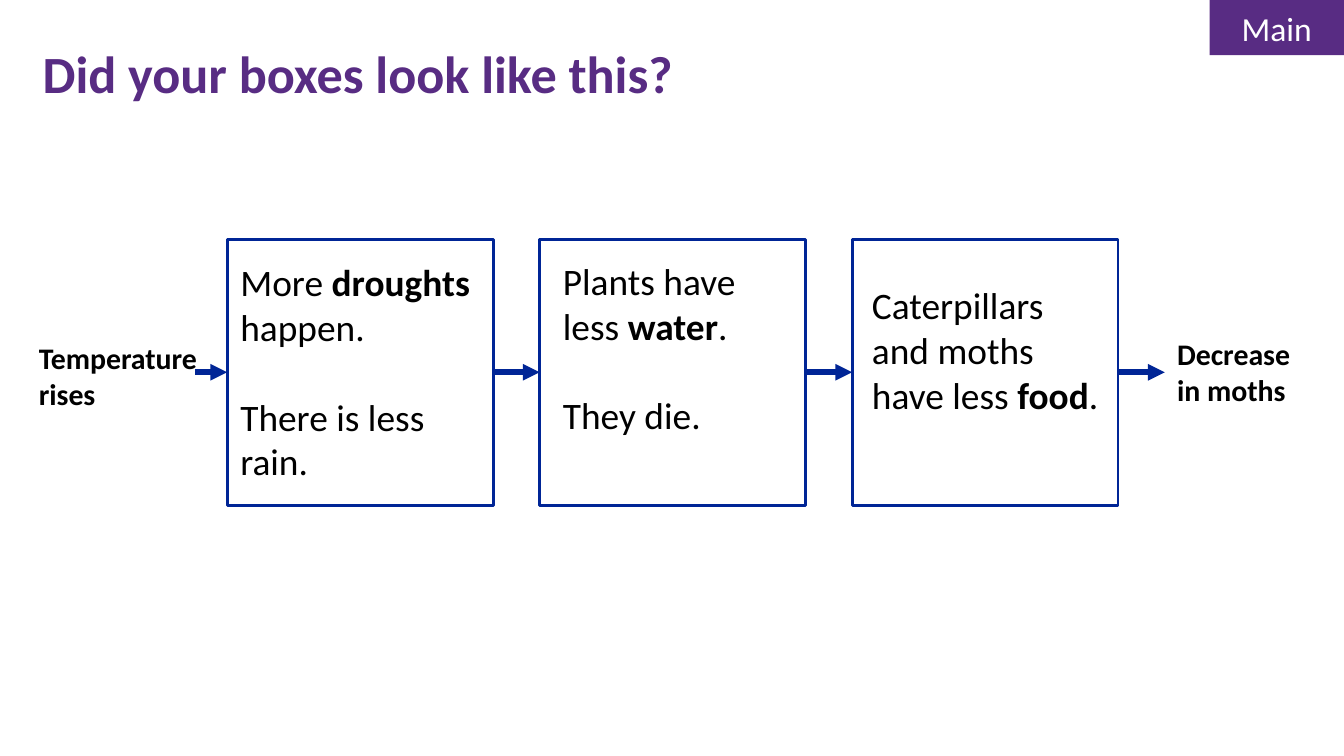
"""Build a slide with a cause-and-effect chain from rising temperature to fewer moths."""
from lxml import etree
from pptx import Presentation
from pptx.dml.color import RGBColor
from pptx.enum.shapes import MSO_CONNECTOR, MSO_SHAPE
from pptx.enum.text import MSO_ANCHOR, PP_ALIGN
from pptx.oxml.ns import qn
from pptx.util import Pt

RECTANGLE = MSO_SHAPE.RECTANGLE
STRAIGHT = MSO_CONNECTOR.STRAIGHT
TOP, MIDDLE = MSO_ANCHOR.TOP, MSO_ANCHOR.MIDDLE
LEFT, CENTER = PP_ALIGN.LEFT, PP_ALIGN.CENTER
LEFT_SIDE, RIGHT_SIDE = 1, 3
COLORS = {"purple": "582C83", "blue": "002596", "black": "000000", "white": "FFFFFF"}


def color(name):
    return RGBColor.from_string(COLORS[name])


def write(shape, text, size=20, fill="black", bold=False, align=LEFT, anchor=TOP, gap=24):
    """Write text, one paragraph a line, with *starred* words in bold."""
    frame = shape.text_frame
    frame.word_wrap = True
    frame.vertical_anchor = anchor
    for number, line in enumerate(text.split("\n")):
        paragraph = frame.add_paragraph() if number else frame.paragraphs[0]
        paragraph.alignment = align
        if number:
            paragraph.space_before = Pt(gap)
        for part, words in enumerate(line.split("*")):
            run = paragraph.add_run()
            run.text = words
            run.font.name = "Calibri"
            run.font.size = Pt(size)
            run.font.bold = bold or part % 2 == 1
            run.font.color.rgb = color(fill)


prs = Presentation()
prs.slide_width, prs.slide_height = Pt(720), Pt(405)
slide = prs.slides.add_slide(prs.slide_layouts[6])
shapes = slide.shapes

box_left, box_top, box_size, box_pitch = 121.7, 128.2, 142.5, 167.4
arrow_y = box_top + box_size / 2
boxes = []
for step in range(3):
    box = shapes.add_shape(RECTANGLE, Pt(box_left + step * box_pitch), Pt(box_top),
                           Pt(box_size), Pt(box_size))
    box.shadow.inherit = False
    box.fill.background()
    box.line.color.rgb = color("blue")
    box.line.width = Pt(1.5)
    boxes.append(box)

for source, target in zip([None] + boxes, boxes + [None]):
    arrow = shapes.add_connector(STRAIGHT, Pt(104.4), Pt(arrow_y), Pt(624), Pt(arrow_y))
    if source:
        arrow.begin_connect(source, RIGHT_SIDE)
    if target:
        arrow.end_connect(target, LEFT_SIDE)
    arrow.line.color.rgb = color("blue")
    arrow.line.width = Pt(3)
    etree.SubElement(arrow.line._get_or_add_ln(), qn("a:tailEnd"), type="triangle")
    etree.SubElement(arrow._element.spPr, qn("a:effectLst"))

heading = {"size": 28, "fill": "purple", "bold": True}
outcome = {"size": 16, "bold": True}
texts = [
    (15.8, 18.7, 651, 41, "Did your boxes look like this?", heading),
    (13.7, 178.6, 101, 46, "Temperature rises", outcome),
    (623.5, 176.4, 76, 46, "Decrease in moths", outcome),
    (121.7, 135.4, 144, 128, "More *droughts* happen.\nThere is less rain.", {}),
    (294.5, 134.6, 124, 104, "Plants have less *water*.\nThey die.", {}),
    (460, 147.6, 137, 104, "Caterpillars and moths have less *food*.", {}),
]
for left, top, width, height, text, style in texts:
    write(shapes.add_textbox(Pt(left), Pt(top), Pt(width), Pt(height)), text, **style)

section = shapes.add_shape(RECTANGLE, Pt(648), Pt(0), Pt(72), Pt(29.5))
section.shadow.inherit = False
section.fill.solid()
section.fill.fore_color.rgb = color("purple")
section.line.fill.background()
write(section, "Main", size=18, fill="white", align=CENTER, anchor=MIDDLE)

prs.save("out.pptx")
